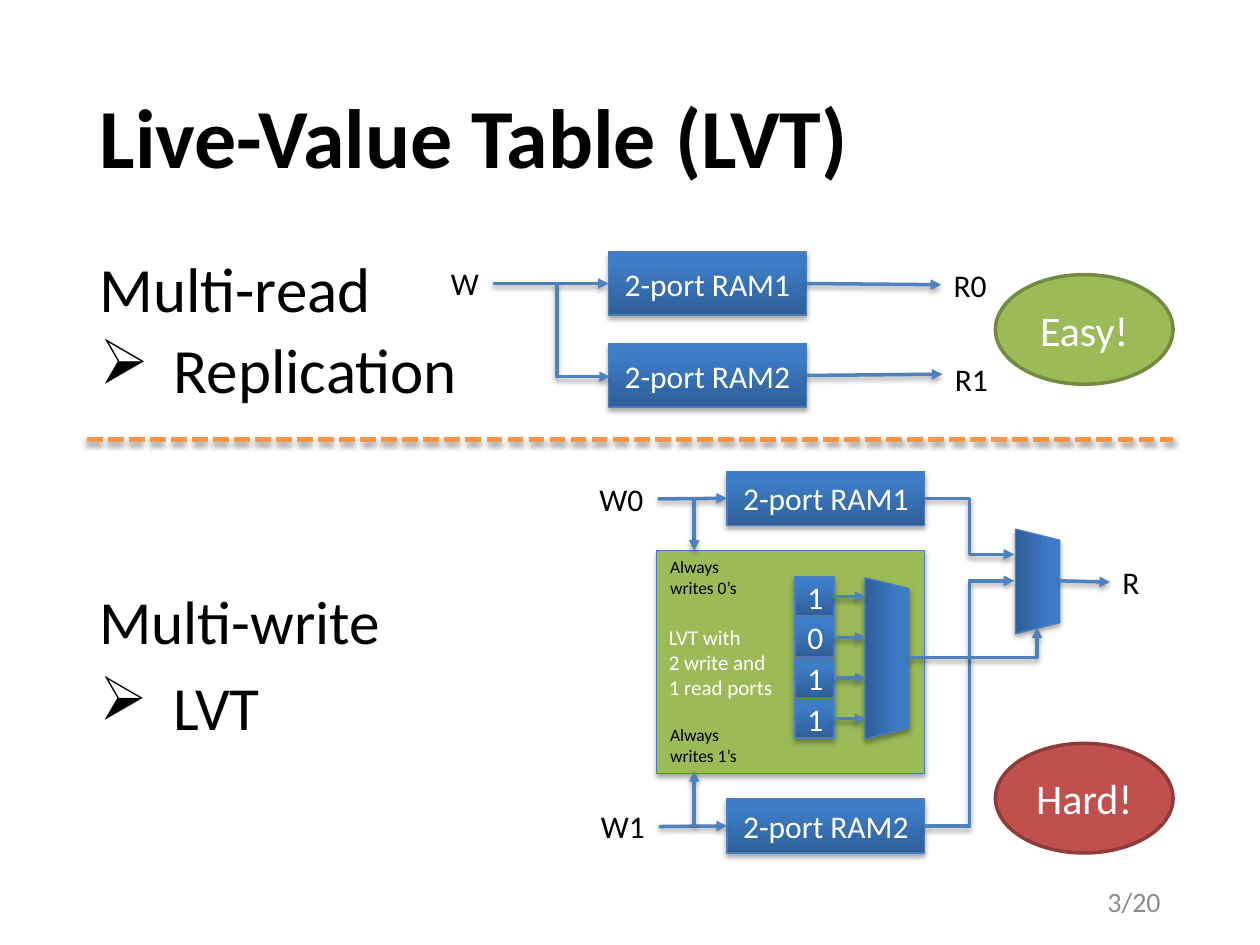
"""Build the Live-Value Table slide on a grid of 100 columns by 75 rows."""
import pptx
import pptx.dml.color
import pptx.enum.dml
import pptx.enum.shapes
import pptx.enum.text
import pptx.oxml
import pptx.oxml.ns
import pptx.util
from lxml import etree

deck = pptx.Presentation()
deck.slide_width, deck.slide_height = pptx.util.Inches(10), pptx.util.Inches(7.5)
COLUMN, ROW = deck.slide_width / 100, deck.slide_height / 75
slide = deck.slides.add_slide(deck.slide_layouts[5])

colour = pptx.dml.color.RGBColor.from_string
qn = pptx.oxml.ns.qn
Pt = pptx.util.Pt
SHAPE = pptx.enum.shapes.MSO_SHAPE
CONNECTOR = pptx.enum.shapes.MSO_CONNECTOR
ALIGN = pptx.enum.text.PP_ALIGN
ANCHOR = pptx.enum.text.MSO_ANCHOR
BLACK, WHITE, BLUE, GREEN = "000000", "FFFFFF", "4F81BD", "9BBB59"
TOP, LEFT, BOTTOM, RIGHT = range(4)
SHADOW = (
    '<a:outerShdw xmlns:a="http://schemas.openxmlformats.org/drawingml/2006/main" '
    'blurRad="39370" dist="22860" dir="5400000" rotWithShape="0">'
    '<a:srgbClr val="000000"><a:alpha val="35000"/></a:srgbClr></a:outerShdw>'
)
shaded = []


def place(kind, left, top, columns, rows, text="", size=18, ink=WHITE, fill=None,
          edge="4B7EBC", weight=0.75, align=ALIGN.CENTER, anchor=ANCHOR.MIDDLE):
    """Put a shape, or a text box when kind is None, on the grid."""
    area = [round(n) for n in (left * COLUMN, top * ROW, columns * COLUMN, rows * ROW)]
    if kind is None:
        item = slide.shapes.add_textbox(*area)
    else:
        item = slide.shapes.add_shape(kind, *area)
        item.shadow.inherit = False
        if fill:
            item.fill.solid()
            item.fill.fore_color.rgb = colour(fill)
        else:
            item.fill.gradient()
            item.fill.gradient_angle = 90
            for stop, (position, shade) in zip(item.fill.gradient_stops, ((0, "2F5F99"), (0.8, "3D7CC7"))):
                stop.position, stop.color.rgb = position, colour(shade)
        item.line.color.rgb = colour(edge)
        item.line.width = Pt(weight)
        if kind != SHAPE.OVAL:
            shaded.append(item)
    frame = item.text_frame
    for name, value in {"word_wrap": True, "vertical_anchor": anchor, "text": text}.items():
        setattr(frame, name, value)
    for paragraph in frame.paragraphs:
        paragraph.alignment = align
        for run in paragraph.runs:
            run.font.color.rgb = colour(ink)
            for name, value in {"name": "Calibri", "size": Pt(size)}.items():
                setattr(run.font, name, value)
    return item


def connect(x1, y1, x2, y2, start=None, end=None, bend=None, turn=0, hue=BLUE, weight=2, head=True):
    """Draw a connector, joined to (shape, side) pairs where given."""
    route = CONNECTOR.ELBOW if bend else CONNECTOR.STRAIGHT
    wire = slide.shapes.add_connector(
        route, *(round(n) for n in (x1 * COLUMN, y1 * ROW, x2 * COLUMN, y2 * ROW)))
    if start:
        wire.begin_connect(*start)
    if end:
        wire.end_connect(*end)
    properties = wire._element.spPr
    if bend:
        properties.find(qn("a:prstGeom")).set("prst", bend)
    if turn:
        properties.find(qn("a:xfrm")).set("rot", str(turn * 60000))
    wire.line.color.rgb = colour(hue)
    wire.line.width = Pt(weight)
    if head:
        etree.SubElement(properties.find(qn("a:ln")), qn("a:tailEnd"), type="triangle")
    etree.SubElement(properties, qn("a:effectLst"))
    shaded.append(wire)
    return wire


title = slide.shapes.title
title_area = {"left": 6.9 * COLUMN, "top": 4 * ROW, "width": 86.2 * COLUMN, "height": 14.5 * ROW}
for name, value in title_area.items():
    setattr(title, name, round(value))
title.text_frame.text = "Live-Value Table (LVT)"
title.text_frame.vertical_anchor = ANCHOR.MIDDLE
heading = title.text_frame.paragraphs[0]
heading.alignment, heading.line_spacing = ALIGN.LEFT, 0.9
for name, value in {"name": "Calibri", "size": Pt(48), "bold": True}.items():
    setattr(heading.font, name, value)
heading.font.color.rgb = colour(BLACK)

for topic, top, columns, rows, size, spacing, gap in (
    ("Multi-read\nReplication", 20, 90, 12.1, 36, 0.9, 7.5),
    ("Multi-write\nLVT", 45.8, 39.2, 22.2, 35, 1, 7),
):
    block = place(None, 6.9, top, columns, rows, topic, size, BLACK, align=ALIGN.LEFT, anchor=ANCHOR.TOP)
    problem, method = block.text_frame.paragraphs
    problem.line_spacing = method.line_spacing = spacing
    method.space_before = Pt(gap)
    indent = round(5.9 * COLUMN)
    bullet = method._p.get_or_add_pPr()
    bullet.set("marL", str(indent))
    bullet.set("indent", str(-indent))
    etree.SubElement(bullet, qn("a:buChar"), char="➢")

port = {}
for name, left, top, columns in (
    ("W", 34.8, 20.5, 4.3), ("R0", 74.7, 20.6, 5.6), ("R1", 74.8, 28.1, 5.6),
    ("W0", 46.6, 37.6, 5.6), ("W1", 46.7, 63.6, 5.6), ("R", 88.1, 44.2, 3.5),
):
    port[name] = place(None, left, top, columns, 4, name, 18, BLACK, align=ALIGN.LEFT, anchor=ANCHOR.TOP)

read_ram1, read_ram2, write_ram1, write_ram2 = (
    place(SHAPE.RECTANGLE, left, top, 15.7, rows, f"2-port RAM{number}")
    for left, top, rows, number in (
        (48.3, 20, 5, 1), (48.3, 27.3, 5, 2), (57.7, 37.4, 4.3, 1), (57.7, 63.4, 4.3, 2))
)
place(SHAPE.RECTANGLE, 52.1, 43.7, 21.3, 17.7, "LVT with\n2 write and\n1 read ports", 12,
      fill=GREEN, align=ALIGN.LEFT)
for value, top in ((0, 43.6), (1, 57)):
    place(None, 52.2, top, 8.4, 4.4, f"Always writes {value}’s", 10, BLACK,
          align=ALIGN.LEFT, anchor=ANCHOR.TOP)
for left, top, columns in ((78.2, 44.4, 8.3), (64, 50.5, 12.8)):
    place(SHAPE.TRAPEZOID, left, top, columns, 3.5).rotation = 90

for index, bit in enumerate("1011"):
    cell_top = 45.8 + 3.23 * index
    cell = place(SHAPE.RECTANGLE, 63.1, cell_top, 3.1, 3.1, bit)
    connect(66.2, cell_top + 1.55, 68.7, cell_top + 1.55, start=(cell, RIGHT))

for verdict, top, fill, edge in (("Easy!", 21.8, GREEN, "738A42"), ("Hard!", 59, "C0504D", "8E3B39")):
    place(SHAPE.OVAL, 79, top, 14.1, 8.7, verdict, 24, fill=fill, edge=edge, weight=2)

connect(39.1, 22.5, 48.3, 22.5, (port["W"], RIGHT), (read_ram1, LEFT))
connect(64, 22.5, 74.7, 22.5, (read_ram1, RIGHT), (port["R0"], LEFT))
connect(64, 29.8, 74.8, 29.7, (read_ram2, RIGHT))
connect(50, 24.1, 42.6, 28.3, bend="bentConnector2", turn=270)
connect(52.2, 39.6, 57.7, 39.6, (port["W0"], RIGHT), (write_ram1, LEFT))
connect(52.3, 65.6, 57.7, 65.6, (port["W1"], RIGHT), (write_ram2, LEFT))
connect(55.1, 39.6, 55.1, 43.7)
connect(55.1, 65.6, 55.1, 61.2)
connect(73.4, 39.6, 80.5, 44, (write_ram1, RIGHT), bend="bentConnector3")
connect(73.4, 65.6, 80.5, 46.1, (write_ram2, RIGHT), bend="bentConnector3")
connect(72.2, 52.2, 82.3, 49.8, bend="bentConnector2")
connect(84.1, 46.1, 88.1, 46.1, end=(port["R"], LEFT))
divider = connect(6.9, 34.9, 93.1, 34.9, hue="F79646", weight=3, head=False)
divider.line.dash_style = pptx.enum.dml.MSO_LINE.SQUARE_DOT

place(None, 70.6, 69.5, 22.5, 4, "3/20", 16, "8C8C8C", align=ALIGN.RIGHT)

for item in shaded:
    item._element.spPr.find(qn("a:effectLst")).append(pptx.oxml.parse_xml(SHADOW))

deck.save("out.pptx")
